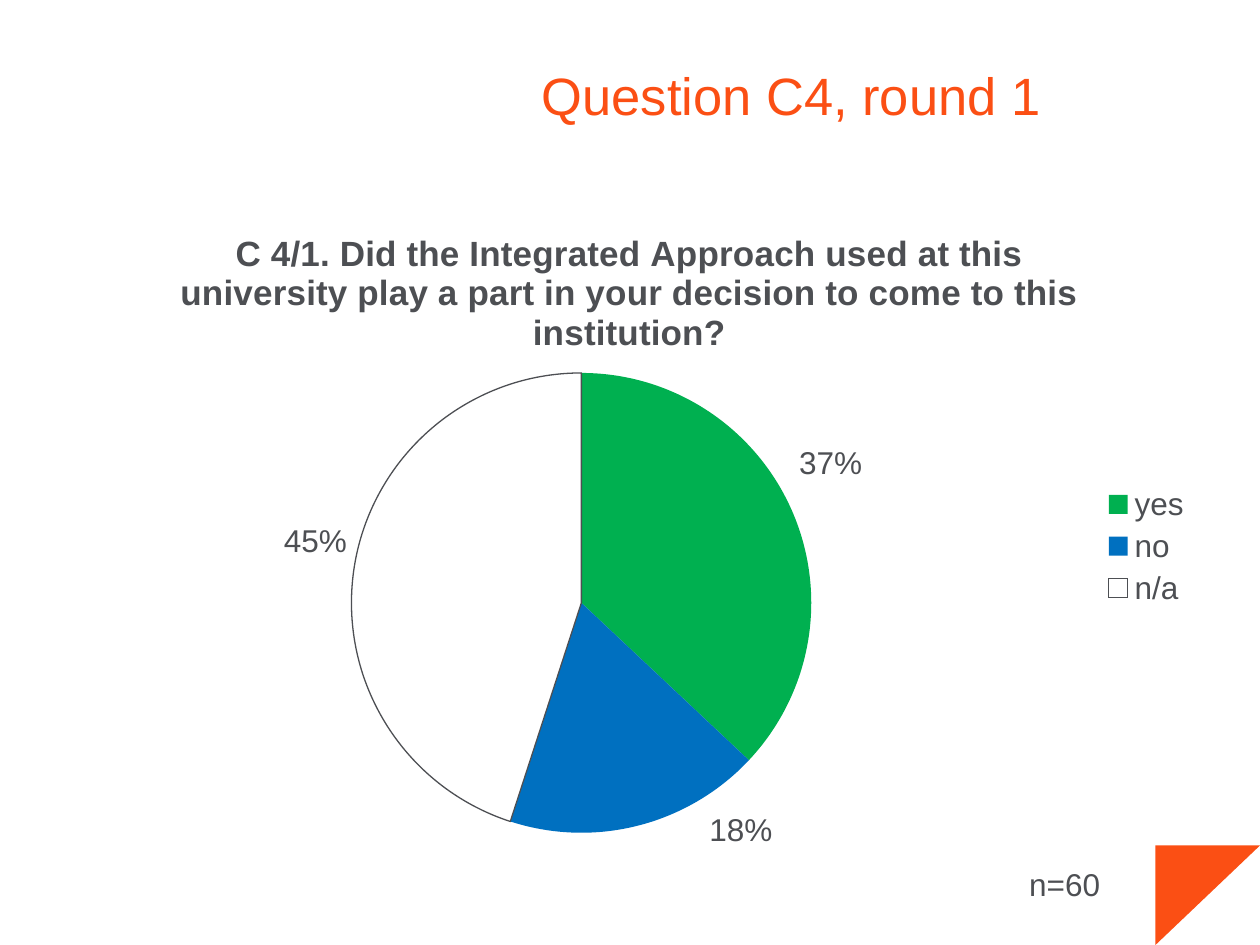
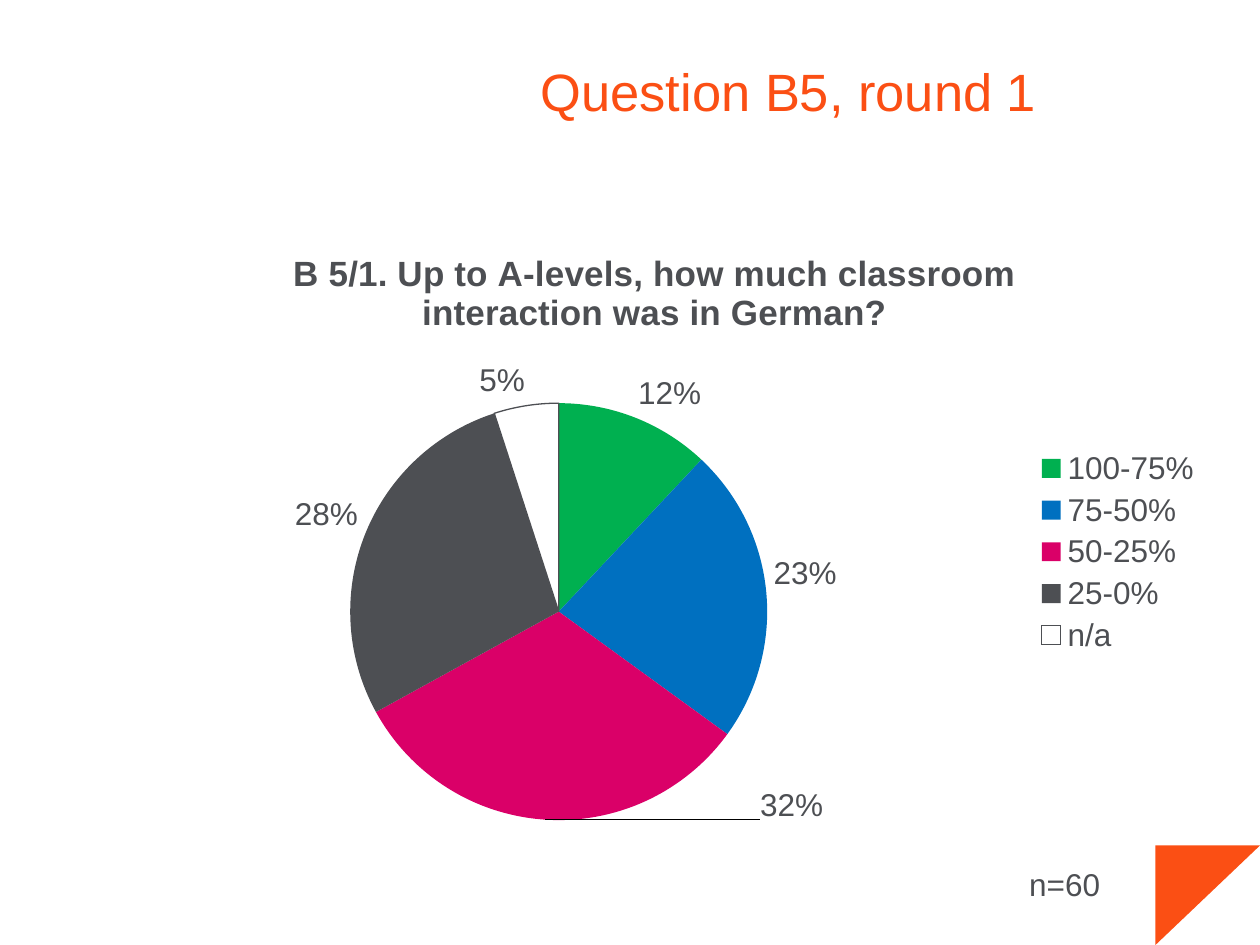
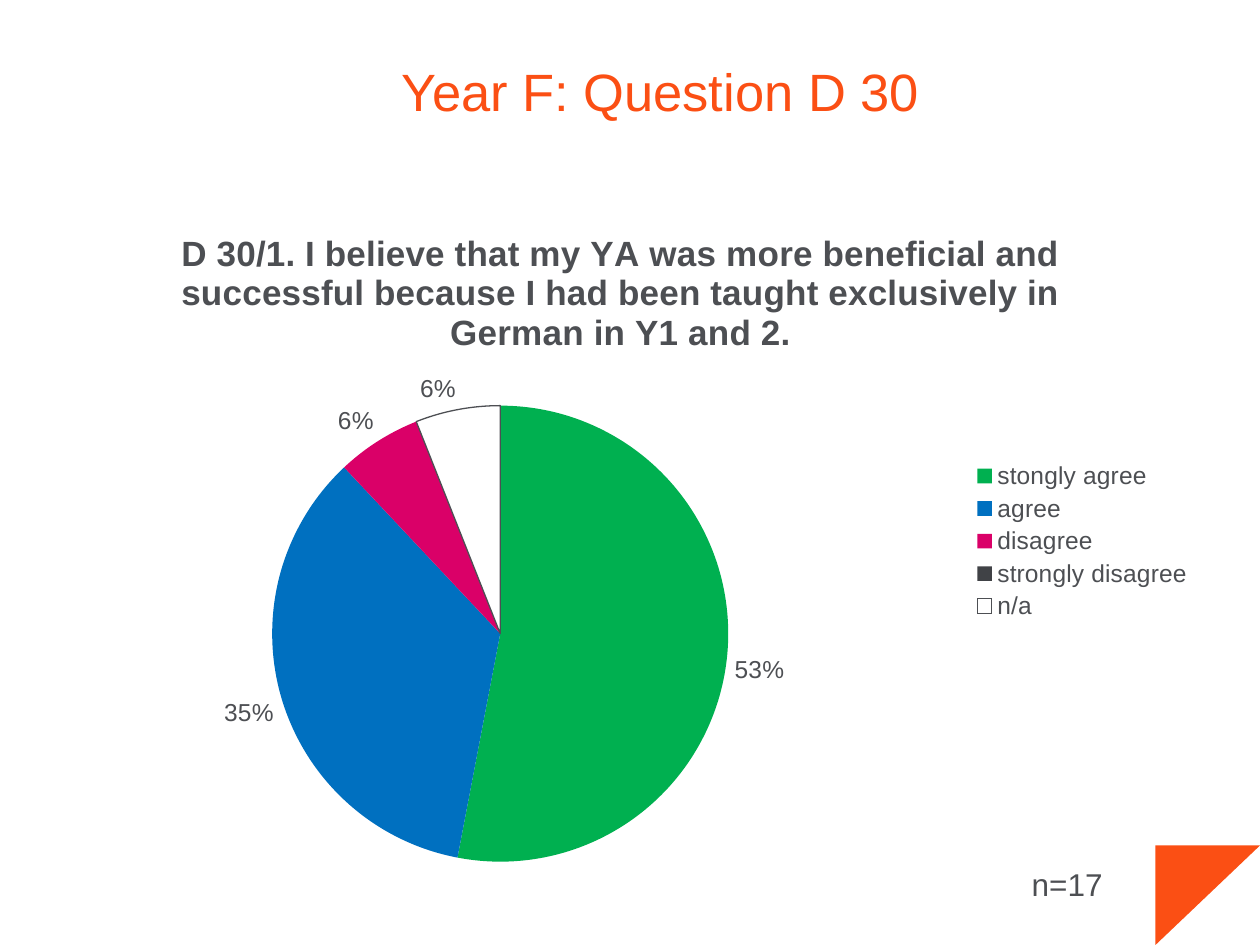
from copy import deepcopy
from dataclasses import dataclass, field

from pptx import Presentation
from pptx.chart.data import CategoryChartData
from pptx.dml.color import RGBColor
from pptx.enum.chart import XL_CHART_TYPE, XL_LABEL_POSITION, XL_LEGEND_POSITION
from pptx.enum.shapes import MSO_SHAPE
from pptx.enum.text import MSO_ANCHOR, MSO_AUTO_SIZE, PP_ALIGN
from pptx.oxml import parse_xml
from pptx.oxml.ns import nsdecls
from pptx.util import Inches, Pt


@dataclass(frozen=True)
class Theme:
    """Colours, type sizes and grid shared by all slides."""

    font: str = "Arial"
    accent: str = "FB4F14"
    ink: str = "4D4F53"
    green: str = "00B050"
    blue: str = "0070C0"
    pink: str = "DA0068"
    charcoal: str = "404246"
    white: str = "FFFFFF"
    title_size: int = 30
    question_size: int = 20
    text_size: int = 18
    small_size: int = 14
    columns: float = 10
    rows: float = 7.5
    cell: int = Inches(1)


THEME = Theme()


@dataclass
class Survey:
    """One survey question with its answers and places on the grid."""

    title: str
    title_area: tuple
    question: str
    answers: list
    chart_area: tuple
    pie: tuple
    sample: str
    sample_left: float = 8.07
    answer_size: int = THEME.text_size
    label_shifts: dict = field(default_factory=dict)
    leader_lines: bool = False


SURVEYS = [
    Survey(
        title="Question C4, round 1",
        title_area=(4.3, 0.47, 4.86, 0.56),
        question="C 4/1. Did the Integrated Approach used at this university "
        "play a part in your decision to come to this institution?",
        answers=[("yes", 37, THEME.green), ("no", 18, THEME.blue), ("n/a", 45, THEME.white)],
        chart_area=(0.43, 1.62, 9.13, 5.43),
        pie=(2.79, 2.96, 3.65),
        sample="n=60",
        label_shifts={0: (0, -0.04), 1: (0.06, -0.03), 2: (0, -0.01)},
    ),
    Survey(
        title="Question B5, round 1",
        title_area=(4.29, 0.44, 4.4, 0.56),
        question="B 5/1. Up to A-levels, how much classroom interaction was in German?",
        answers=[
            ("100-75%", 12, THEME.green),
            ("75-50%", 23, THEME.blue),
            ("50-25%", 32, THEME.pink),
            ("25-0%", 28, THEME.ink),
            ("n/a", 5, THEME.white),
        ],
        chart_area=(0.75, 1.78, 8.89, 5.2),
        pie=(2.78, 3.2, 3.31),
        sample="n=60",
        label_shifts={2: (0.22, -0.06)},
        leader_lines=True,
    ),
    Survey(
        title="Year F: Question D 30",
        title_area=(3.19, 0.44, 5.97, 0.56),
        question="D 30/1. I believe that my YA was more beneficial and successful "
        "because I had been taught exclusively in German in Y1 and 2.",
        answers=[
            ("stongly agree", 53, THEME.green),
            ("agree", 35, THEME.blue),
            ("disagree", 6, THEME.pink),
            ("strongly disagree", None, THEME.charcoal),
            ("n/a", 6, THEME.white),
        ],
        chart_area=(0.28, 1.62, 9.29, 5.35),
        pie=(2.16, 3.22, 3.62),
        sample="n=17",
        sample_left=8.09,
        answer_size=THEME.small_size,
    ),
]


def on_grid(*cells):
    """Turn grid cells into lengths."""
    return [int(count * THEME.cell) for count in cells]


def set_font(font, size, color=THEME.ink, bold=False):
    """Format a font."""
    font.name, font.size, font.bold = THEME.font, Pt(size), bold
    font.color.rgb = RGBColor.from_string(color)


def put_text(frame, text, align=None, **style):
    """Write one formatted paragraph into a text frame."""
    para = frame.paragraphs[0]
    if align is not None:
        para.alignment = align
    span = para.add_run()
    span.text = text
    set_font(span.font, **style)


def paint(target, color):
    """Fill a shape or a slice, with an outline only when it is white."""
    target.fill.solid()
    target.fill.fore_color.rgb = RGBColor.from_string(color)
    if color == THEME.white:
        target.line.width = Pt(0.75)
        target.line.color.rgb = RGBColor.from_string(THEME.ink)
    else:
        target.line.fill.background()


def add_corner(slide):
    """Draw the corner triangle and hand it to the layout for every slide."""
    corner = slide.shapes.add_shape(MSO_SHAPE.RIGHT_TRIANGLE, *on_grid(9.19, 6.69, 0.79, 0.83))
    corner.rotation = 90
    corner.shadow.inherit = False
    paint(corner, THEME.accent)
    slide.slide_layout.shapes.element.append(corner.element)


def add_title(slide, text, area):
    """Place and fill the title placeholder."""
    title = slide.shapes.title
    title.left, title.top, title.width, title.height = on_grid(*area)
    frame = title.text_frame
    frame.margin_left = frame.margin_right = frame.margin_top = frame.margin_bottom = 0
    frame.vertical_anchor = MSO_ANCHOR.MIDDLE
    frame.auto_size = MSO_AUTO_SIZE.NONE
    put_text(frame, text, align=PP_ALIGN.LEFT, size=THEME.title_size, color=THEME.accent)


def add_sample(slide, text, left):
    """Add the sample size note."""
    box = slide.shapes.add_textbox(*on_grid(left, 6.82, 0.77, 0.4))
    box.text_frame.word_wrap = False
    box.text_frame.auto_size = MSO_AUTO_SIZE.SHAPE_TO_FIT_TEXT
    put_text(box.text_frame, text, size=THEME.text_size)


def layout_xml(namespace="", **values):
    """Build a manual chart layout."""
    parts = "".join(f'<c:{name} val="{value}"/>' for name, value in values.items())
    return f"<c:layout {namespace}><c:manualLayout>{parts}</c:manualLayout></c:layout>"


def place_pie(chart, pie, area):
    """Set the pie's square inside the chart."""
    plot_area = chart.element.xpath("c:chart/c:plotArea")[0]
    for old in plot_area.xpath("c:layout"):
        plot_area.remove(old)
    left, top, size = pie
    layout = layout_xml(
        nsdecls("c"),
        layoutTarget="inner",
        xMode="edge",
        yMode="edge",
        x=round((left - area[0]) / area[2], 4),
        y=round((top - area[1]) / area[3], 4),
        w=round(size / area[2], 4),
        h=round(size / area[3], 4),
    )
    plot_area.insert(0, parse_xml(layout))


def shift_labels(holder, shifts):
    """Move single percentage labels by shares of the chart's size."""
    flags = "".join(
        f'<c:show{name} val="{int(name == "Percent")}"/>'
        for name in ("LegendKey", "Val", "CatName", "SerName", "Percent", "BubbleSize")
    )
    for place, (index, (across, down)) in enumerate(shifts.items()):
        label = parse_xml(
            f'<c:dLbl {nsdecls("c")}><c:idx val="{index}"/>{layout_xml(x=across, y=down)}'
            f'<c:dLblPos val="outEnd"/>{flags}</c:dLbl>'
        )
        label.insert(2, deepcopy(holder.xpath("c:txPr")[0]))
        holder.insert(place, label)


def add_labels(series, survey):
    """Label the slices with percentages."""
    labels = series.data_labels
    labels.show_percentage, labels.show_value = True, False
    labels.number_format, labels.number_format_is_linked = "0%", False
    labels.position = XL_LABEL_POSITION.OUTSIDE_END
    set_font(labels.font, survey.answer_size)
    holder = series.format.line and labels._element
    for leader in holder.xpath("c:showLeaderLines"):
        leader.set("val", str(int(survey.leader_lines)))
    shift_labels(holder, survey.label_shifts)


def add_pie(slide, survey):
    """Add the pie chart of a survey question."""
    names, values, colors = zip(*survey.answers)
    data = CategoryChartData()
    data.categories = names
    data.add_series("Series 1", values)
    chart = slide.shapes.add_chart(
        XL_CHART_TYPE.PIE, *on_grid(*survey.chart_area), data
    ).chart
    set_font(chart.font, THEME.text_size)
    chart.has_title = True
    put_text(chart.chart_title.text_frame, survey.question, size=THEME.question_size, bold=True)
    chart.chart_title.include_in_layout = False
    chart.has_legend = True
    chart.legend.position = XL_LEGEND_POSITION.RIGHT
    chart.legend.include_in_layout = False
    set_font(chart.legend.font, survey.answer_size)
    plot = chart.plots[0]
    plot.vary_by_categories = True
    series = plot.series[0]
    for index, color in enumerate(colors):
        paint(series.points[index].format, color)
    add_labels(series, survey)
    place_pie(chart, survey.pie, survey.chart_area)


def main():
    """Build and save the deck."""
    deck = Presentation()
    deck.slide_width, deck.slide_height = on_grid(THEME.columns, THEME.rows)
    for number, survey in enumerate(SURVEYS):
        slide = deck.slides.add_slide(deck.slide_layouts[5])
        if number == 0:
            add_corner(slide)
        add_title(slide, survey.title, survey.title_area)
        add_pie(slide, survey)
        add_sample(slide, survey.sample, survey.sample_left)
    deck.save("out.pptx")


if __name__ == "__main__":
    main()
